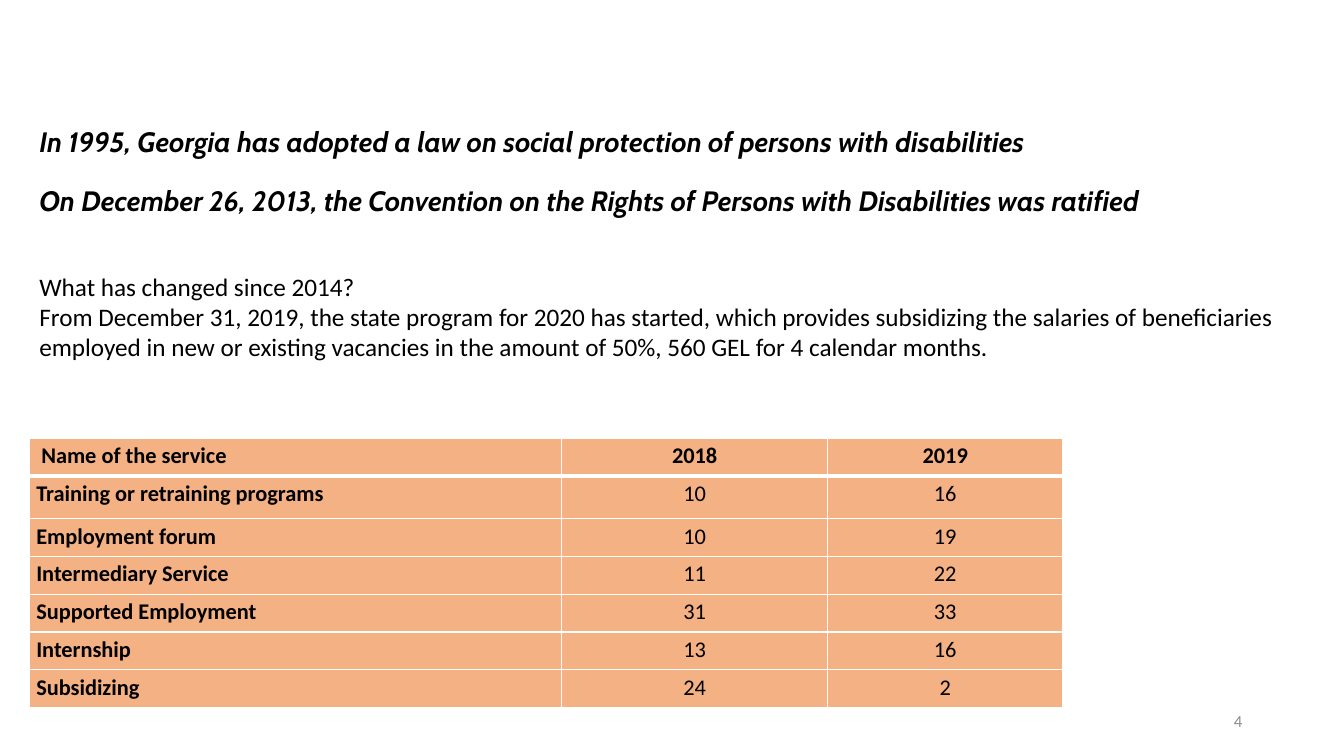
from lxml import etree
from pptx import Presentation
from pptx import util as u
from pptx.dml.color import RGBColor
from pptx.enum import text
from pptx.oxml import ns

COLORS = {"ink": "000000", "number": "8C8C8C", "cell": "F4B183", "border": "FFFFFF"}
ALIGN = text.PP_ALIGN


def write_paragraph(paragraph, words, font, **layout):
    """Fill one paragraph, setting its font and layout from format values."""
    paragraph.text = words
    for name, value in layout.items():
        setattr(paragraph, name, value)
    for name, value in font.items():
        if name == "color":
            paragraph.font.color.rgb = RGBColor.from_string(COLORS[value])
        else:
            setattr(paragraph.font, name, value)


def place(shape, left, top, width, height):
    shape.left, shape.top = u.Inches(left), u.Inches(top)
    shape.width, shape.height = u.Inches(width), u.Inches(height)
    shape.text_frame.word_wrap = True
    shape.text_frame.auto_size = text.MSO_AUTO_SIZE.NONE
    shape.text_frame.vertical_anchor = text.MSO_ANCHOR.TOP


presentation = Presentation()
presentation.slide_width = u.Inches(13.33)
presentation.slide_height = u.Inches(7.5)
slide = presentation.slides.add_slide(presentation.slide_layouts[1])

# Title: the two laws
title = slide.shapes.title
place(title, 0.29, 1.22, 11.5, 1.4)
laws = [
    "In 1995, Georgia has adopted a law on social protection of persons with disabilities",
    "On December 26, 2013, the Convention on the Rights of Persons with Disabilities was ratified",
]
law_font = {"name": "Cabin", "size": u.Pt(20), "bold": True, "italic": True, "color": "ink"}
for index, law in enumerate(laws):
    paragraph = title.text_frame.add_paragraph() if index else title.text_frame.paragraphs[0]
    write_paragraph(paragraph, law, law_font, alignment=ALIGN.LEFT, line_spacing=0.9,
                    space_before=u.Pt(21 * index))

# Body: what changed
body = slide.placeholders[1]
place(body, 0.29, 2.64, 12.58, 1.01)
changes = [
    "What has changed since 2014?",
    "From December 31, 2019, the state program for 2020 has started, which provides subsidizing "
    "the salaries of beneficiaries employed in new or existing vacancies in the amount of 50%, "
    "560 GEL for 4 calendar months.",
]
change_font = {"name": "Calibri", "size": u.Pt(18), "color": "ink"}
for index, change in enumerate(changes):
    paragraph = body.text_frame.add_paragraph() if index else body.text_frame.paragraphs[0]
    properties = paragraph._p.get_or_add_pPr()
    properties.set("marL", "0")
    properties.set("indent", "0")
    etree.SubElement(properties, ns.qn("a:buNone"))
    write_paragraph(paragraph, change, change_font, alignment=ALIGN.LEFT, space_before=u.Pt(0))

# Table of services
services = [
    ("Name of the service", "2018", "2019"),
    ("Training or retraining programs", "10", "16"),
    ("Employment forum", "10", "19"),
    ("Intermediary Service", "11", "22"),
    ("Supported Employment", "31", "33"),
    ("Internship", "13", "16"),
    ("Subsidizing", "24", "2"),
]
table = slide.shapes.add_table(len(services), 3, u.Inches(0.29), u.Inches(4.35),
                               u.Inches(10.25), u.Inches(2.67)).table
for column, width in zip(table.columns, (5.28, 2.64, 2.33)):
    column.width = u.Inches(width)
for row_index, service in enumerate(services):
    table.rows[row_index].height = u.Inches(0.42 if row_index == 1 else 0.375)
    for column_index, words in enumerate(service):
        cell = table.cell(row_index, column_index)
        is_header, is_name = row_index == 0, column_index == 0
        cell.margin_left = u.Inches(0.12 if is_header and is_name else 0.07)
        cell.margin_right = u.Inches(0.07)
        cell.margin_top = cell.margin_bottom = 0
        cell_properties = cell._tc.get_or_add_tcPr()
        for side in ("L", "R", "T", "B"):
            thick = (row_index, side) in ((0, "B"), (1, "T"))
            line = etree.SubElement(cell_properties, ns.qn(f"a:ln{side}"),
                                    w=str(u.Pt(3 if thick else 1)))
            fill = etree.SubElement(line, ns.qn("a:solidFill"))
            etree.SubElement(fill, ns.qn("a:srgbClr"), val=COLORS["border"])
        cell.fill.solid()
        cell.fill.fore_color.rgb = RGBColor.from_string(COLORS["cell"])
        cell_font = {"name": "Calibri", "size": u.Pt(16), "bold": is_header or is_name,
                     "color": "ink"}
        write_paragraph(cell.text_frame.paragraphs[0], words, cell_font, line_spacing=1.15,
                        alignment=ALIGN.JUSTIFY if is_name else ALIGN.CENTER)

# Slide number
number = slide.shapes.add_textbox(0, 0, 0, 0)
place(number, 9.42, 6.95, 3, 0.4)
number.text_frame.vertical_anchor = text.MSO_ANCHOR.MIDDLE
number_font = {"name": "Calibri", "size": u.Pt(12), "color": "number"}
write_paragraph(number.text_frame.paragraphs[0], "4", number_font, alignment=ALIGN.RIGHT)

presentation.save("out.pptx")
